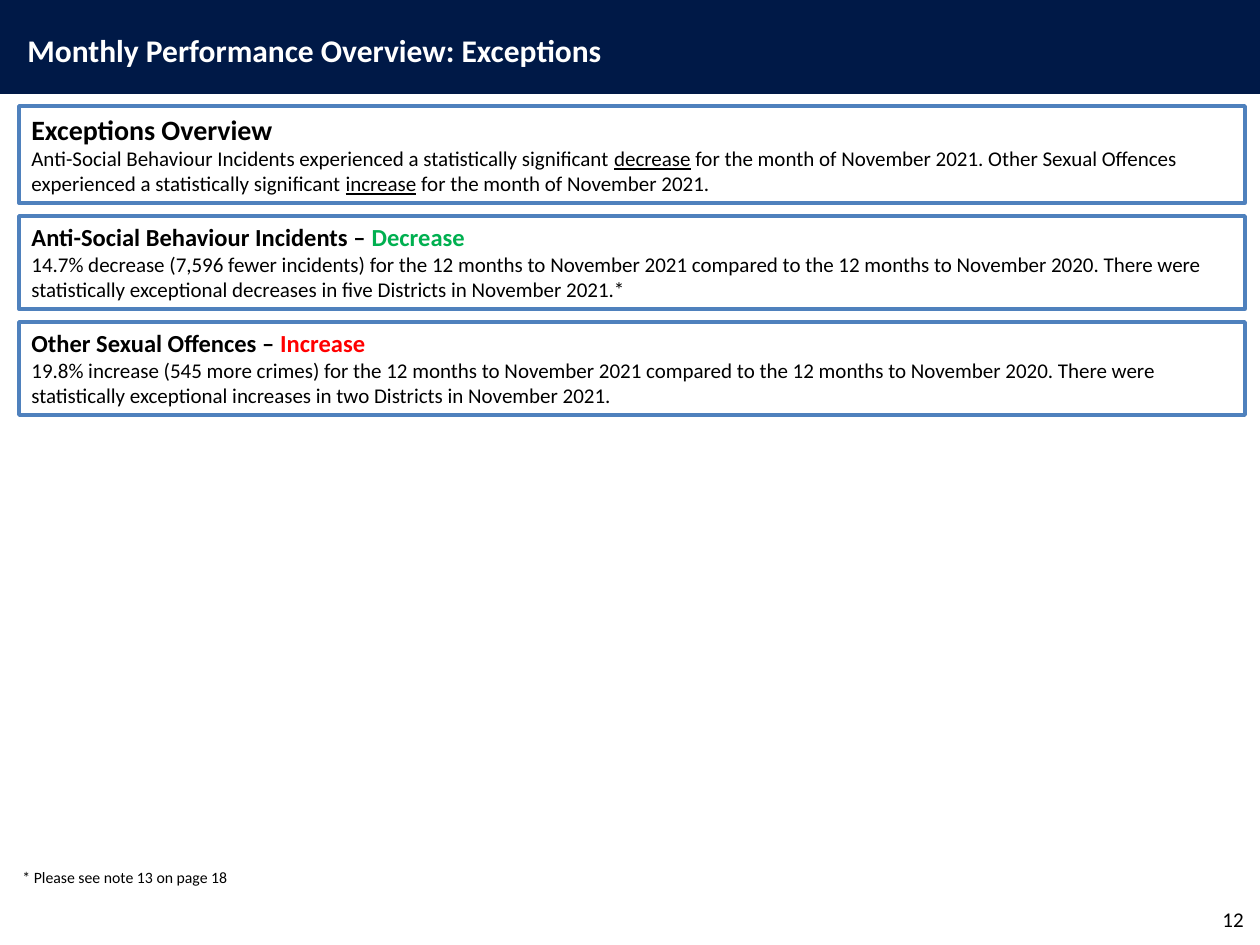
import pptx
import pptx.util
import pptx.dml.color
import pptx.enum.shapes
import pptx.enum.text

PX = 914400 / 126
RGB = pptx.dml.color.RGBColor.from_string
ALIGN = pptx.enum.text.PP_ALIGN
ANCHOR = pptx.enum.text.MSO_ANCHOR
RECT = pptx.enum.shapes.MSO_SHAPE.RECTANGLE

THEME = {
    "font": "Calibri",
    "navy": "001947", "white": "FFFFFF", "black": "000000",
    "border": "4F81BD", "good": "00B050", "bad": "FF0000",
    "title": 18, "overview": 16, "heading": 14, "body": 12, "note": 9,
}


def px(*lengths):
    return [pptx.util.Emu(round(n * PX)) for n in lengths]


def write(tf, paragraphs, align=ALIGN.LEFT, anchor=ANCHOR.TOP):
    """Fill a frame; each paragraph is (size name, [(text, colour name, font values)])."""
    tf.word_wrap = True
    tf.vertical_anchor = anchor
    for i, (size, runs) in enumerate(paragraphs):
        p = tf.paragraphs[0] if i == 0 else tf.add_paragraph()
        p.alignment = align
        for text, colour, values in runs:
            r = p.add_run()
            r.text = text
            r.font.color.rgb = RGB(THEME[colour])
            base = {"name": THEME["font"], "size": pptx.util.Pt(THEME[size])}
            for name, value in {**base, **values}.items():
                setattr(r.font, name, value)


prs = pptx.Presentation()
prs.slide_width, prs.slide_height = px(1260, 945)
s = prs.slides.add_slide(prs.slide_layouts[6])

BOLD = {"bold": True}
UNDERLINE = {"underline": True}

# Header band
band = s.shapes.add_shape(RECT, *px(0, 0, 1260, 94))
band.shadow.inherit = False
band.fill.solid()
band.fill.fore_color.rgb = RGB(THEME["navy"])
band.line.fill.background()

# Title, page number and footnote
labels = [
    ((15, 25, 714, 51), "title", "Monthly Performance Overview: Exceptions",
     "white", BOLD, ALIGN.LEFT, ANCHOR.TOP),
    ((963, 894, 293, 50), "body", "12", "black", {}, ALIGN.RIGHT, ANCHOR.MIDDLE),
    ((10, 862, 633, 32), "note", "* Please see note 13 on page 18",
     "black", {}, ALIGN.LEFT, ANCHOR.TOP),
]
for box, size, text, colour, values, align, anchor in labels:
    sp = s.shapes.add_textbox(*px(*box))
    write(sp.text_frame, [(size, [(text, colour, values)])], align, anchor)

# Stacked panels: height, heading size, heading runs, body runs
panels = [
    (97, "overview", [("Exceptions Overview", "black", BOLD)], [
        ("Anti-Social Behaviour Incidents experienced a statistically significant ", "black", {}),
        ("decrease", "black", UNDERLINE),
        (" for the month of November 2021. Other Sexual Offences experienced "
         "a statistically significant ", "black", {}),
        ("increase", "black", UNDERLINE),
        (" for the month of November 2021.", "black", {}),
    ]),
    (93, "heading", [
        ("Anti-Social Behaviour Incidents – ", "black", BOLD),
        ("Decrease", "good", BOLD),
    ], [
        ("14.7% decrease (7,596 fewer incidents) for the 12 months to November 2021 "
         "compared to the 12 months to November 2020. There were statistically "
         "exceptional decreases in five Districts in November 2021.*", "black", {}),
    ]),
    (93, "heading", [
        ("Other Sexual Offences – ", "black", BOLD),
        ("Increase", "bad", BOLD),
    ], [
        ("19.8% increase (545 more crimes) for the 12 months to November 2021 "
         "compared to the 12 months to November 2020. There were statistically "
         "exceptional increases in two Districts in November 2021.", "black", {}),
    ]),
]
top, gap = 106, 13
for height, size, heading, body in panels:
    sp = s.shapes.add_shape(RECT, *px(19, top, 1226, height))
    sp.shadow.inherit = False
    sp.fill.solid()
    sp.fill.fore_color.rgb = RGB(THEME["white"])
    sp.line.color.rgb = RGB(THEME["border"])
    sp.line.width = pptx.util.Pt(2)
    write(sp.text_frame, [(size, heading), ("body", body)])
    top += height + gap

prs.save("out.pptx")
